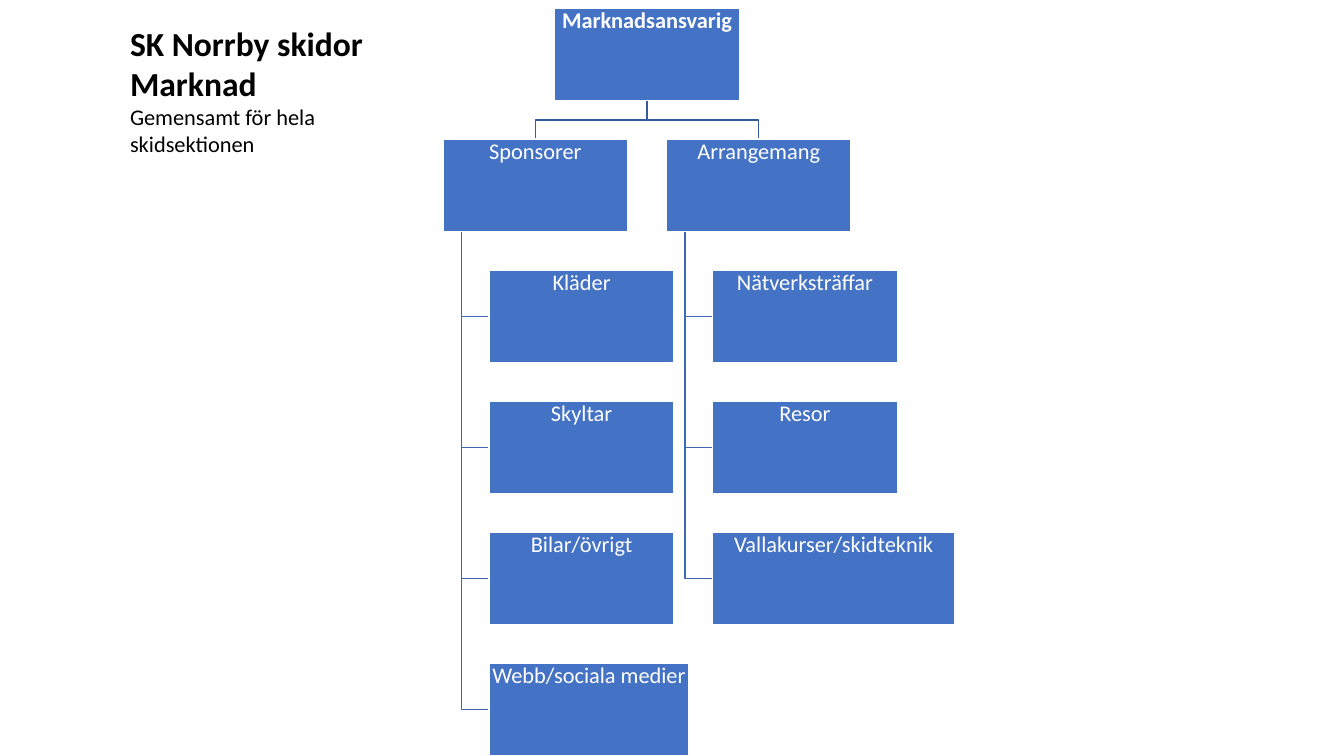
from pptx import Presentation
from pptx.dml.color import RGBColor
from pptx.enum.shapes import MSO_SHAPE
from pptx.enum.text import MSO_ANCHOR, PP_ALIGN
from pptx.util import Pt

RECT = MSO_SHAPE.RECTANGLE
TOP = MSO_ANCHOR.TOP
CENTER = PP_ALIGN.CENTER
BLUE = RGBColor(0x44, 0x72, 0xC4)
RAIL = RGBColor(0x3E, 0x67, 0xB2)
FORK = RGBColor(0x36, 0x5B, 0x9D)
WHITE = RGBColor(255, 255, 255)
BLACK = RGBColor(0, 0, 0)
FONT = "Calibri"

WIDE, HIGH = 132, 66
ROW, COL = 93.6, 159.6
INDENT, INSET = 33, 13.2

LEAD = "Marknadsansvarig"
TEAMS = [
    ("Sponsorer", [("Kläder", WIDE), ("Skyltar", WIDE), ("Bilar/övrigt", WIDE),
                   ("Webb/sociala medier", 142.6)]),
    ("Arrangemang", [("Nätverksträffar", WIDE), ("Resor", WIDE),
                     ("Vallakurser/skidteknik", 173)]),
]
TITLE = [("SK Norrby skidor", 24, True), ("Marknad", 24, True),
         ("Gemensamt för hela skidsektionen", 16, False)]


def add_run(para, text, size, color, bold=False):
    run = para.add_run()
    run.text = text
    run.font.name = FONT
    run.font.size = Pt(size)
    run.font.bold = bold
    run.font.color.rgb = color


def add_line(slide, points, color):
    spots = [(Pt(x), Pt(y)) for x, y in points]
    form = slide.shapes.build_freeform(*spots[0])
    form.add_line_segments(spots[1:], close=False)
    line = form.convert_to_shape()
    line.shadow.inherit = False
    line.fill.background()
    line.line.color.rgb = color
    line.line.width = Pt(1)


def add_box(slide, text, left, top, width=WIDE, bold=False):
    box = slide.shapes.add_shape(RECT, Pt(left), Pt(top), Pt(width), Pt(HIGH))
    box.shadow.inherit = False
    box.fill.solid()
    box.fill.fore_color.rgb = BLUE
    box.line.color.rgb = WHITE
    box.line.width = Pt(1)
    frame = box.text_frame
    frame.word_wrap = False
    frame.vertical_anchor = TOP
    frame.margin_left = frame.margin_right = Pt(0.7)
    frame.margin_top = frame.margin_bottom = Pt(0.7)
    para = frame.paragraphs[0]
    para.alignment = CENTER
    para.line_spacing = 0.9
    add_run(para, text, 16, WHITE, bold)


def add_team(slide, head, items, left, top):
    rail = left + INSET
    inner = left + INDENT
    rows = [top + ROW * (i + 1) for i in range(len(items))]
    for row in rows:
        mid = row + HIGH / 2
        add_line(slide, [(rail, top + HIGH), (rail, mid), (inner, mid)], RAIL)
    add_box(slide, head, left, top)
    for (text, width), row in zip(items, rows):
        add_box(slide, text, inner, row, width)


def add_chart(slide, left, top):
    lead = left + COL * (len(TEAMS) - 1) / 2
    stem = lead + WIDE / 2
    base = top + HIGH
    heads = top + ROW
    fork = (base + heads) / 2
    for i, (head, items) in enumerate(TEAMS):
        side = left + COL * i
        mid = side + WIDE / 2
        add_line(slide, [(stem, base), (stem, fork), (mid, fork), (mid, heads)], FORK)
        add_team(slide, head, items, side, heads)
    add_box(slide, LEAD, lead, top, bold=True)


def add_title(slide, left, top, width, height):
    box = slide.shapes.add_textbox(Pt(left), Pt(top), Pt(width), Pt(height))
    frame = box.text_frame
    frame.word_wrap = True
    for i, (text, size, bold) in enumerate(TITLE):
        para = frame.add_paragraph() if i else frame.paragraphs[0]
        add_run(para, text, size, BLACK, bold)


def main():
    deck = Presentation()
    deck.slide_width, deck.slide_height = Pt(960), Pt(540)
    slide = deck.slides.add_slide(deck.slide_layouts[6])
    add_chart(slide, 316.4, 5.8)
    add_title(slide, 85.8, 12.6, 208, 104.4)
    deck.save("out.pptx")


if __name__ == "__main__":
    main()
